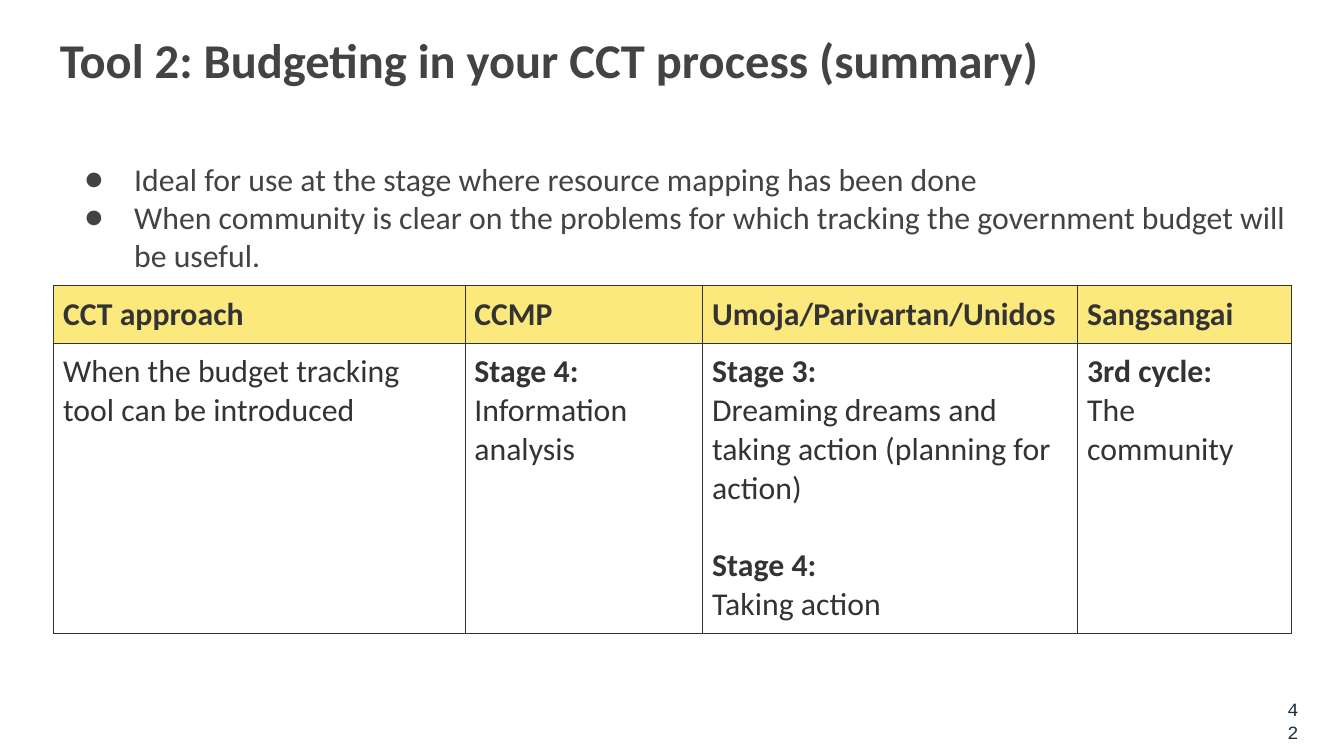
from dataclasses import dataclass

from lxml.etree import SubElement
from pptx import Presentation
from pptx.dml.color import RGBColor
from pptx.enum.text import MSO_ANCHOR as Anchor, MSO_AUTO_SIZE as AutoSize, PP_ALIGN as Align
from pptx.oxml.ns import qn
from pptx.util import Emu, Pt

PX = 4572  # EMU per px, 200 px to the inch


def px(n):
    return Emu(n * PX)


@dataclass(frozen=True)
class Theme:
    font: str = "Calibri"
    number_font: str = "Courier New"
    heading: str = "434343"
    ink: str = "333333"
    number: str = "173145"
    header_fill: str = "FCE97D"
    body_fill: str = "FFFFFF"
    title_size: int = 26
    body_size: int = 17
    number_size: int = 10
    border: float = 0.5


class SlideBuilder:
    def __init__(self, prs, theme):
        self.t = theme
        self.s = prs.slides.add_slide(prs.slide_layouts[5])

    def run(self, p, text, size, color, bold=False, font=None):
        r = p.add_run()
        r.text = text
        r.font.name = font or self.t.font
        r.font.size = Pt(size)
        r.font.bold = bold
        r.font.color.rgb = RGBColor.from_string(color)

    def frame(self, sp, margin=20):
        tf = sp.text_frame
        tf.word_wrap = True
        tf.auto_size = AutoSize.NONE
        tf.vertical_anchor = Anchor.TOP
        tf.margin_left = tf.margin_right = tf.margin_top = tf.margin_bottom = px(margin)
        return tf

    def title(self, text, x, y, w, h):
        sp = self.s.shapes.title
        sp.left, sp.top, sp.width, sp.height = px(x), px(y), px(w), px(h)
        p = self.frame(sp).paragraphs[0]
        p.alignment = Align.LEFT
        self.run(p, text, self.t.title_size, self.t.heading, bold=True)

    def textbox(self, x, y, w, h):
        return self.frame(self.s.shapes.add_textbox(px(x), px(y), px(w), px(h)))

    def bullets(self, items, x, y, w, h):
        tf = self.textbox(x, y, w, h)
        for i, item in enumerate(items):
            p = tf.add_paragraph() if i else tf.paragraphs[0]
            pPr = p._p.get_or_add_pPr()
            pPr.set("marL", str(px(100)))
            pPr.set("indent", str(px(-74)))
            color = SubElement(pPr, qn("a:buClr"))
            SubElement(color, qn("a:srgbClr"), val=self.t.heading)
            SubElement(pPr, qn("a:buFont"), typeface=self.t.font)
            SubElement(pPr, qn("a:buChar"), char="●")
            self.run(p, item, self.t.body_size, self.t.heading)

    def page_number(self, text, x, y, w, h):
        p = self.textbox(x, y, w, h).paragraphs[0]
        p.alignment = Align.RIGHT
        self.run(p, text, self.t.number_size, self.t.number, font=self.t.number_font)

    def borders(self, cell):
        tcPr = cell._tc.get_or_add_tcPr()
        for side in ("lnL", "lnR", "lnT", "lnB"):
            ln = SubElement(tcPr, qn(f"a:{side}"), w=str(Pt(self.t.border)))
            fill = SubElement(ln, qn("a:solidFill"))
            SubElement(fill, qn("a:srgbClr"), val=self.t.ink)

    def cell(self, cell, entries, fill):
        """Each entry is a (bold heading, plain text) pair; either may be empty."""
        cell.margin_left = cell.margin_right = px(14)
        cell.margin_top = cell.margin_bottom = px(14)
        self.borders(cell)
        cell.fill.solid()
        cell.fill.fore_color.rgb = RGBColor.from_string(fill)
        tf = cell.text_frame
        for i, (heading, text) in enumerate(entries):
            p = tf.add_paragraph() if i else tf.paragraphs[0]
            if i:
                p.space_before = Pt(20.75)
            if heading:
                self.run(p, heading, self.t.body_size, self.t.ink, bold=True)
            if heading and text:
                p.add_line_break()
            if text:
                self.run(p, text, self.t.body_size, self.t.ink)

    def table(self, rows, x, y, widths, heights):
        table = self.s.shapes.add_table(
            len(rows), len(widths), px(x), px(y), px(sum(widths)), px(sum(heights))).table
        for col, w in zip(table.columns, widths):
            col.width = px(w)
        for r, (row, h) in enumerate(zip(rows, heights)):
            table.rows[r].height = px(h)
            fill = self.t.body_fill if r else self.t.header_fill
            for c, entries in enumerate(row):
                self.cell(table.cell(r, c), entries, fill)


def main():
    prs = Presentation()
    prs.slide_width, prs.slide_height = px(2000), px(1125)
    slide = SlideBuilder(prs, Theme())

    # Page number and title
    slide.page_number("42", 1882, 1019, 70, 60)
    slide.title("Tool 2: Budgeting in your CCT process (summary)", 69, 24, 1920, 126)

    # When to use the tool
    slide.bullets([
        "Ideal for use at the stage where resource mapping has been done",
        "When community is clear on the problems for which tracking the "
        "government budget will be useful.",
    ], 80, 218, 1908, 248)

    # Stage of introduction in each approach
    headers = ["CCT approach", "CCMP", "Umoja/Parivartan/Unidos", "Sangsangai"]
    stages = [
        [("", "When the budget tracking tool can be introduced")],
        [("Stage 4:", "Information analysis")],
        [("Stage 3:", "Dreaming dreams and taking action (planning for action)"),
         ("Stage 4:", "Taking action")],
        [("3rd cycle:", "The community")],
    ]
    slide.table([[[(h, "")] for h in headers], stages],
                80, 425, [612, 354, 558, 318], [84, 432])

    prs.save("out.pptx")


if __name__ == "__main__":
    main()
